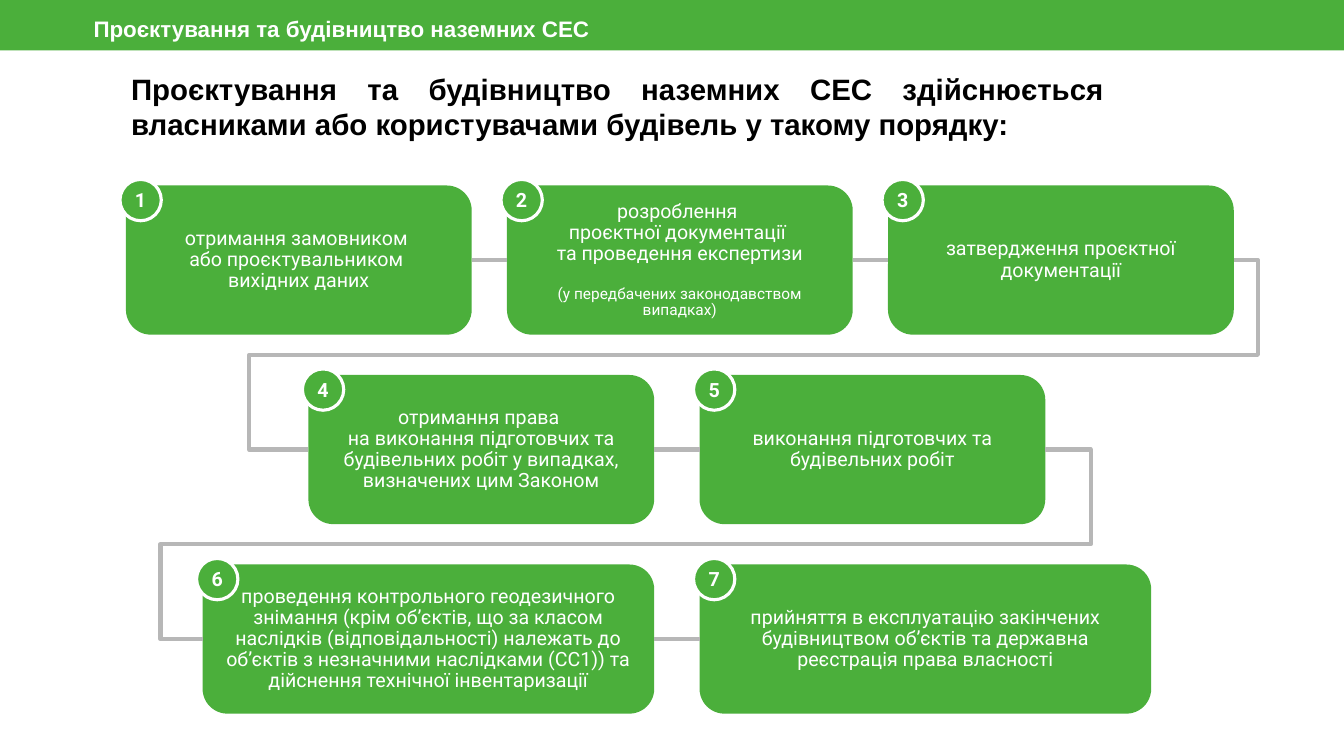
from itertools import pairwise

from lxml import etree
from pptx import Presentation
from pptx import util as u
from pptx.dml.color import RGBColor
from pptx.enum import shapes, text
from pptx.oxml.ns import qn

COLORS = {"green": "4BAF3B", "white": "FFFFFF", "gray": "B7B7B7", "black": "000000"}
COLUMNS, ROWS = 133.33, 75  # grid cells are a tenth of an inch

BOX_HEIGHT, NARROW, WIDE = 14.8, 34.3, 44.8
FIRST_TOP, ROW_PITCH = 18.4, 18.8
BADGE_SIZE, BADGE_OFFSET = 4.1, 0.6

# Per row: left edge of the first box, box width, gap between boxes, step texts
STEP_ROWS = [
    (12.5, NARROW, 3.5, [
        ["отримання замовником \vабо проєктувальником \vвихідних даних"],
        ["розроблення \vпроєктної документації \vта проведення експертизи",
         "(у передбачених законодавством випадках)"],
        ["затвердження проєктної документації"],
    ]),
    (30.6, NARROW, 4.5, [
        ["отримання права \vна виконання підготовчих та будівельних робіт у випадках, "
         "визначених цим Законом"],
        ["виконання підготовчих та будівельних робіт"],
    ]),
    (20.1, WIDE, 4.5, [
        ["проведення контрольного геодезичного знімання (крім об’єктів, що за класом "
         "наслідків (відповідальності) належать до об’єктів з незначними наслідками "
         "(СС1)) та дійснення технічної інвентаризації"],
        ["прийняття в експлуатацію закінчених будівництвом об’єктів та державна "
         "реєстрація права власності"],
    ]),
]
# How far the line between two rows reaches out to the right and to the left
DETOURS = [(2.4, 5.9), (4.5, 4.2)]


class FlowSlide:
    def __init__(self, deck):
        self.slide = deck.slides.add_slide(deck.slide_layouts[5])
        self.column = deck.slide_width / COLUMNS
        self.row = deck.slide_height / ROWS

    def place(self, left, top, width, height):
        """Turn columns and rows into slide lengths."""
        return (u.Emu(round(left * self.column)), u.Emu(round(top * self.row)),
                u.Emu(round(width * self.column)), u.Emu(round(height * self.row)))

    def frame(self, holder, anchor, inset=0.1):
        frame = holder.text_frame
        frame.word_wrap = True
        frame.auto_size = text.MSO_AUTO_SIZE.NONE
        frame.vertical_anchor = anchor
        frame.margin_left = frame.margin_right = u.Inches(0.1)
        frame.margin_top = frame.margin_bottom = u.Inches(inset)
        return frame

    def style(self, paragraph, size, font, color="white", bold=False,
              align=text.PP_ALIGN.CENTER, spacing=1.0):
        paragraph.alignment = align
        paragraph.line_spacing = spacing
        for run in paragraph.runs:
            run.font.size = u.Pt(size)
            run.font.name = font
            run.font.bold = bold
            run.font.color.rgb = RGBColor.from_string(COLORS[color])
        for line_break in paragraph._p.findall(qn("a:br")):
            etree.SubElement(line_break, qn("a:rPr"), sz=str(size * 100))

    def title(self, wording, *area):
        title = self.slide.shapes.title
        title.left, title.top, title.width, title.height = self.place(*area)
        frame = self.frame(title, text.MSO_ANCHOR.MIDDLE, 0.05)
        frame.text = wording
        self.style(frame.paragraphs[0], 21, "Arial", "black", True,
                   text.PP_ALIGN.JUSTIFY, 0.99)

    def shape(self, kind, *area):
        shape = self.slide.shapes.add_shape(kind, *self.place(*area))
        shape.shadow.inherit = False
        shape.fill.solid()
        shape.fill.fore_color.rgb = RGBColor.from_string(COLORS["green"])
        shape.line.fill.background()
        return shape

    def step(self, wordings, *area):
        box = self.shape(shapes.MSO_SHAPE.ROUNDED_RECTANGLE, *area)
        frame = self.frame(box, text.MSO_ANCHOR.MIDDLE)
        frame.text = wordings[0]
        self.style(frame.paragraphs[0], 14, "Roboto", spacing=0.9)
        for wording in wordings[1:]:
            remark = frame.add_paragraph()
            remark.text = wording
            remark.space_before = u.Pt(15)
            self.style(remark, 11, "Roboto", spacing=0.9)
        return box

    def badge(self, number, left, top):
        badge = self.shape(shapes.MSO_SHAPE.OVAL, left, top, BADGE_SIZE, BADGE_SIZE)
        badge.line.color.rgb = RGBColor.from_string(COLORS["white"])
        badge.line.width = u.Pt(2.25)
        frame = self.frame(badge, text.MSO_ANCHOR.MIDDLE)
        frame.word_wrap = False
        frame.text = str(number)
        self.style(frame.paragraphs[0], 14, "Roboto", bold=True)

    def link(self, start, end, detour=None):
        """Join two boxes; a detour bends the line round to the next row."""
        kind = shapes.MSO_CONNECTOR.ELBOW if detour else shapes.MSO_CONNECTOR.STRAIGHT
        line = self.slide.shapes.add_connector(
            kind, start.left + start.width, start.top + start.height // 2,
            end.left, end.top + end.height // 2)
        line.begin_connect(start, 3)
        line.end_connect(end, 1)
        line.line.color.rgb = RGBColor.from_string(COLORS["gray"])
        line.line.width = u.Pt(3)
        properties = line._element.spPr
        etree.SubElement(properties, qn("a:effectLst"))
        if detour:
            right, left = (reach * self.column / line.width for reach in detour)
            geometry = properties.find(qn("a:prstGeom"))
            geometry.set("prst", "bentConnector5")
            guides = geometry.find(qn("a:avLst"))
            for index, share in enumerate((-right, 0.5, 1 + left), 1):
                etree.SubElement(guides, qn("a:gd"), name=f"adj{index}",
                                 fmla=f"val {round(share * 100000)}")

    def header(self, wording):
        self.shape(shapes.MSO_SHAPE.RECTANGLE, 0, 0, COLUMNS, 5)
        label = self.slide.shapes.add_textbox(*self.place(8.3, 0.6, 108, 5.1))
        frame = self.frame(label, text.MSO_ANCHOR.TOP)
        frame.text = wording
        self.style(frame.paragraphs[0], 16, "Arial", bold=True,
                   align=text.PP_ALIGN.LEFT, spacing=0.99)


def main():
    deck = Presentation()
    deck.slide_width, deck.slide_height = u.Inches(13.33), u.Inches(7.5)
    flow = FlowSlide(deck)
    flow.title("Проєктування та будівництво наземних СЕС здійснюється власниками "
               "або користувачами будівель у такому порядку:", 12, 7.6, 98.5, 6.2)

    steps, corners = [], []
    for row, (first_left, width, gap, row_texts) in enumerate(STEP_ROWS):
        top = FIRST_TOP + row * ROW_PITCH
        for position, wordings in enumerate(row_texts):
            left = first_left + position * (width + gap)
            box = flow.step(wordings, left, top, width, BOX_HEIGHT)
            steps.append((row, box))
            corners.append((left, top))
    for number, (left, top) in enumerate(corners, 1):
        flow.badge(number, left - BADGE_OFFSET, top - BADGE_OFFSET)
    for (row, box), (next_row, next_box) in pairwise(steps):
        flow.link(box, next_box, DETOURS[row] if next_row > row else None)

    flow.header("Проєктування та будівництво наземних СЕС")
    deck.save("out.pptx")


if __name__ == "__main__":
    main()
